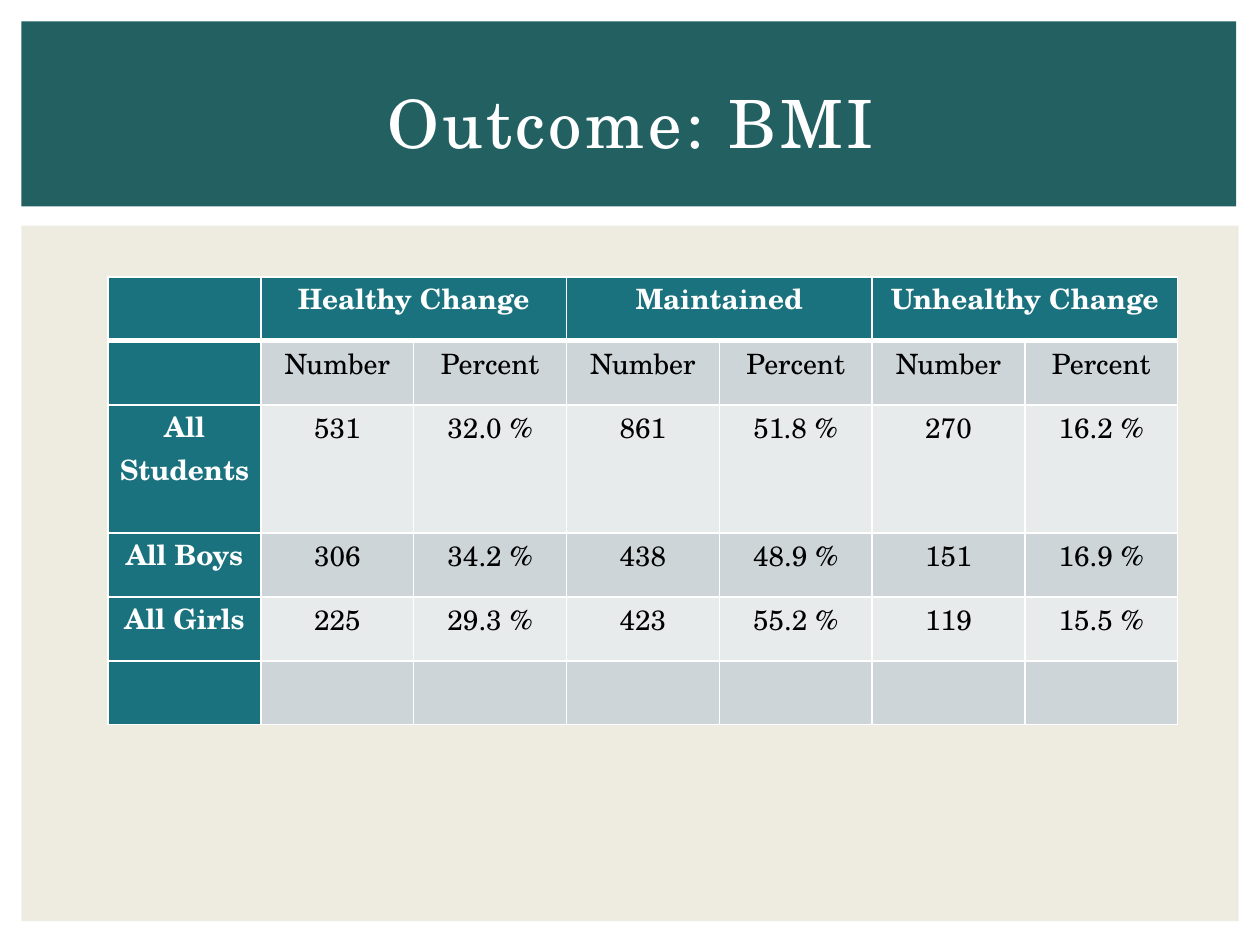
from dataclasses import dataclass

from lxml import etree
from pptx import Presentation
from pptx.dml.color import RGBColor
from pptx.enum import shapes, text
from pptx.oxml import ns
from pptx.util import Cm, Pt


@dataclass(frozen=True)
class Theme:
    font: str = "TeX Gyre Schola"
    white: str = "FFFFFF"
    black: str = "000000"
    panel: str = "EEECE1"
    banner: str = "236062"
    header: str = "1A727E"
    dark_band: str = "CDD5D8"
    light_band: str = "E8EBEC"
    title_size: float = 38
    table_size: float = 16
    table_leading: float = 24.5


THEME = Theme()

GROUPS = ["Healthy Change", "Maintained", "Unhealthy Change"]
ROWS = [
    [""] + ["Number", "Percent"] * len(GROUPS),
    ["All Students", "531", "32.0 %", "861", "51.8 %", "270", "16.2 %"],
    ["All Boys", "306", "34.2 %", "438", "48.9 %", "151", "16.9 %"],
    ["All Girls", "225", "29.3 %", "423", "55.2 %", "119", "15.5 %"],
    [""] * 7,
]


def write(frame, content, size, color, bold=False, leading=None, tracking=None):
    """Put one centred, formatted paragraph into a text frame."""
    para = frame.paragraphs[0]
    para.alignment = text.PP_ALIGN.CENTER
    if leading:
        para.line_spacing = Pt(leading)
    span = para.add_run()
    span.text = content
    span.font.name = THEME.font
    span.font.size = Pt(size)
    span.font.bold = bold
    span.font.color.rgb = RGBColor.from_string(color)
    if tracking:
        span._r.get_or_add_rPr().set("spc", str(tracking * 100))


def add_panel(page, left, top, width, height, color):
    box = page.shapes.add_shape(
        shapes.MSO_SHAPE.RECTANGLE, Cm(left), Cm(top), Cm(width), Cm(height))
    box.shadow.inherit = False
    box.fill.solid()
    box.fill.fore_color.rgb = RGBColor.from_string(color)
    box.line.fill.background()


def set_borders(cell, top=1, bottom=1):
    """Draw white cell borders with the given widths in points."""
    props = cell._tc.get_or_add_tcPr()
    widths = {"a:lnL": 1, "a:lnR": 1, "a:lnT": top, "a:lnB": bottom}
    for index, (tag, width) in enumerate(widths.items()):
        line = etree.Element(ns.qn(tag), w=str(Pt(width)))
        fill = etree.SubElement(line, ns.qn("a:solidFill"))
        etree.SubElement(fill, ns.qn("a:srgbClr"), val=THEME.white)
        props.insert(index, line)


def format_cell(cell, content, row, column):
    heading = row == 0 or column == 0
    band = THEME.dark_band if row % 2 else THEME.light_band
    cell.margin_left = cell.margin_right = Cm(0.18)
    cell.margin_top = cell.margin_bottom = 0
    cell.fill.solid()
    cell.fill.fore_color.rgb = RGBColor.from_string(
        THEME.header if heading else band)
    set_borders(cell, top=3 if row == 1 else 1, bottom=3 if row == 0 else 1)
    if content:
        write(cell.text_frame, content, THEME.table_size,
              THEME.white if heading else THEME.black,
              bold=heading, leading=THEME.table_leading)


def add_results_table(page):
    # Each group heading spans a number and a percent column
    heading = [""]
    for group in GROUPS:
        heading += [group, ""]
    grid = [heading] + ROWS
    row_height, column_width = 1.29, 3.08
    table = page.shapes.add_table(
        len(grid), len(heading), Cm(2.18), Cm(5.58),
        Cm(column_width * len(heading)),
        Cm(row_height * (len(grid) + 1))).table

    for column in table.columns:
        column.width = Cm(column_width)
    for row, values in enumerate(grid):
        # The two-line label needs a double row
        double = values[0] == "All Students"
        table.rows[row].height = Cm(row_height * (2 if double else 1))
        for column, content in enumerate(values):
            format_cell(table.cell(row, column), content, row, column)
    for column in range(1, len(heading), 2):
        table.cell(0, column).merge(table.cell(0, column + 1))


def place_title(page, content):
    title = page.shapes.title
    title.left, title.top = Cm(1.07), Cm(0.99)
    title.width, title.height = Cm(23.29), Cm(2.92)
    title.text_frame.vertical_anchor = text.MSO_ANCHOR.MIDDLE
    write(title.text_frame, content, THEME.title_size, THEME.white, tracking=2)
    # Bring the title in front of the banner
    title.element.getparent().append(title.element)


def main():
    deck = Presentation()
    deck.slide_width, deck.slide_height = Cm(25.4), Cm(19.05)
    page = deck.slides.add_slide(deck.slide_layouts[5])

    # Background panel and title banner
    add_panel(page, 0.43, 4.55, 24.54, 14.02, THEME.panel)
    add_panel(page, 0.43, 0.43, 24.49, 3.73, THEME.banner)

    # Content
    add_results_table(page)
    place_title(page, "Outcome: BMI")

    deck.save("out.pptx")


if __name__ == "__main__":
    main()
